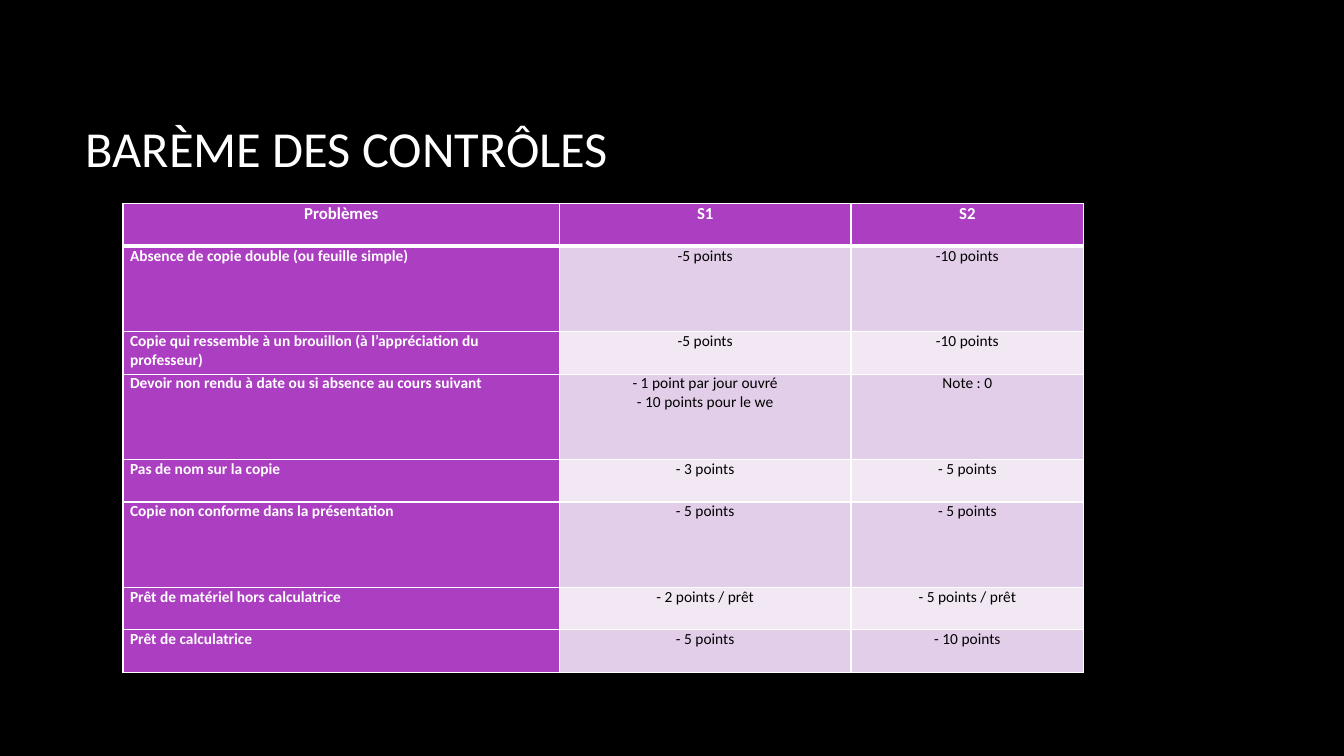
from lxml.etree import SubElement
from pptx import Presentation
from pptx.dml.color import RGBColor
from pptx.enum.text import MSO_ANCHOR, PP_ALIGN
from pptx.oxml.ns import qn
from pptx.util import Inches, Pt

# Content
TITLE = "BARÈME DES CONTRÔLES"
ROWS = [
    ("Problèmes", "S1", "S2"),
    ("Absence de copie double (ou feuille simple)", "-5 points", "-10 points"),
    ("Copie qui ressemble à un brouillon (à l’appréciation du professeur)",
     "-5 points", "-10 points"),
    ("Devoir non rendu à date ou si absence au cours suivant",
     "- 1 point par jour ouvré\n- 10 points pour le we", "Note : 0"),
    ("Pas de nom sur la copie", "- 3 points", "- 5 points"),
    ("Copie non conforme dans la présentation", "- 5 points", "- 5 points"),
    ("Prêt de matériel hors calculatrice", "- 2 points / prêt", "- 5 points / prêt"),
    ("Prêt de calculatrice", "- 5 points", "- 10 points"),
]
COL_WIDTHS = [4.33, 2.89, 2.31]
ROW_HEIGHT = 0.423
TALL_ROWS = {1, 3, 5}  # twice the base height


class Theme:
    font = "Calibri"
    title_size, head_size, body_size = 36, 12, 11
    background, white, black = "000000", "FFFFFF", "000000"
    accent, band_dark, band_light = "AC3EC1", "E3CEE9", "F1E8F4"
    border, head_border = 1, 3


def write(tf, text, size, color, bold=False, align=PP_ALIGN.LEFT):
    """Fill a text frame, one paragraph per line of text."""
    for i, line in enumerate(text.split("\n")):
        p = tf.paragraphs[0] if i == 0 else tf.add_paragraph()
        p.alignment = align
        r = p.add_run()
        r.text = line
        r.font.name = Theme.font
        r.font.size = Pt(size)
        r.font.bold = bold
        r.font.color.rgb = RGBColor.from_string(color)


def set_borders(cell, top, bottom):
    """Draw the four cell borders, which must precede the fill."""
    tc_pr = cell._tc.get_or_add_tcPr()
    widths = {"lnL": Theme.border, "lnR": Theme.border, "lnT": top, "lnB": bottom}
    for i, (side, width) in enumerate(widths.items()):
        ln = SubElement(tc_pr, qn(f"a:{side}"), w=str(Pt(width)))
        fill = SubElement(ln, qn("a:solidFill"))
        SubElement(fill, qn("a:srgbClr"), val=Theme.white)
        tc_pr.insert(i, ln)


prs = Presentation()
prs.slide_width, prs.slide_height = Inches(13.33), Inches(7.5)
slide = prs.slides.add_slide(prs.slide_layouts[5])
slide.background.fill.solid()
slide.background.fill.fore_color.rgb = RGBColor.from_string(Theme.background)

# Title
title = slide.shapes.title
title.left, title.top = Inches(0.75), Inches(0.67)
title.width, title.height = Inches(11.08), Inches(1.59)
title.text_frame.vertical_anchor = MSO_ANCHOR.MIDDLE
write(title.text_frame, TITLE, Theme.title_size, Theme.white)

# Penalty table
heights = [ROW_HEIGHT * (2 if i in TALL_ROWS else 1) for i in range(len(ROWS))]
table = slide.shapes.add_table(
    len(ROWS), len(COL_WIDTHS), Inches(1.22), Inches(2.02),
    Inches(sum(COL_WIDTHS)), Inches(sum(heights))).table
for col, width in zip(table.columns, COL_WIDTHS):
    col.width = Inches(width)

for i, (row, height) in enumerate(zip(ROWS, heights)):
    table.rows[i].height = Inches(height)
    band = Theme.band_dark if i % 2 else Theme.band_light
    for j, text in enumerate(row):
        cell = table.cell(i, j)
        head, label = i == 0, j == 0
        strong = head or label
        cell.margin_left = cell.margin_right = Inches(0.07)
        cell.margin_top = cell.margin_bottom = 0
        cell.fill.solid()
        cell.fill.fore_color.rgb = RGBColor.from_string(Theme.accent if strong else band)
        set_borders(cell, Theme.head_border if i == 1 else Theme.border,
                    Theme.head_border if head else Theme.border)
        write(cell.text_frame, text,
              Theme.head_size if head else Theme.body_size,
              Theme.white if strong else Theme.black, bold=strong,
              align=PP_ALIGN.LEFT if label and not head else PP_ALIGN.CENTER)

prs.save("out.pptx")
